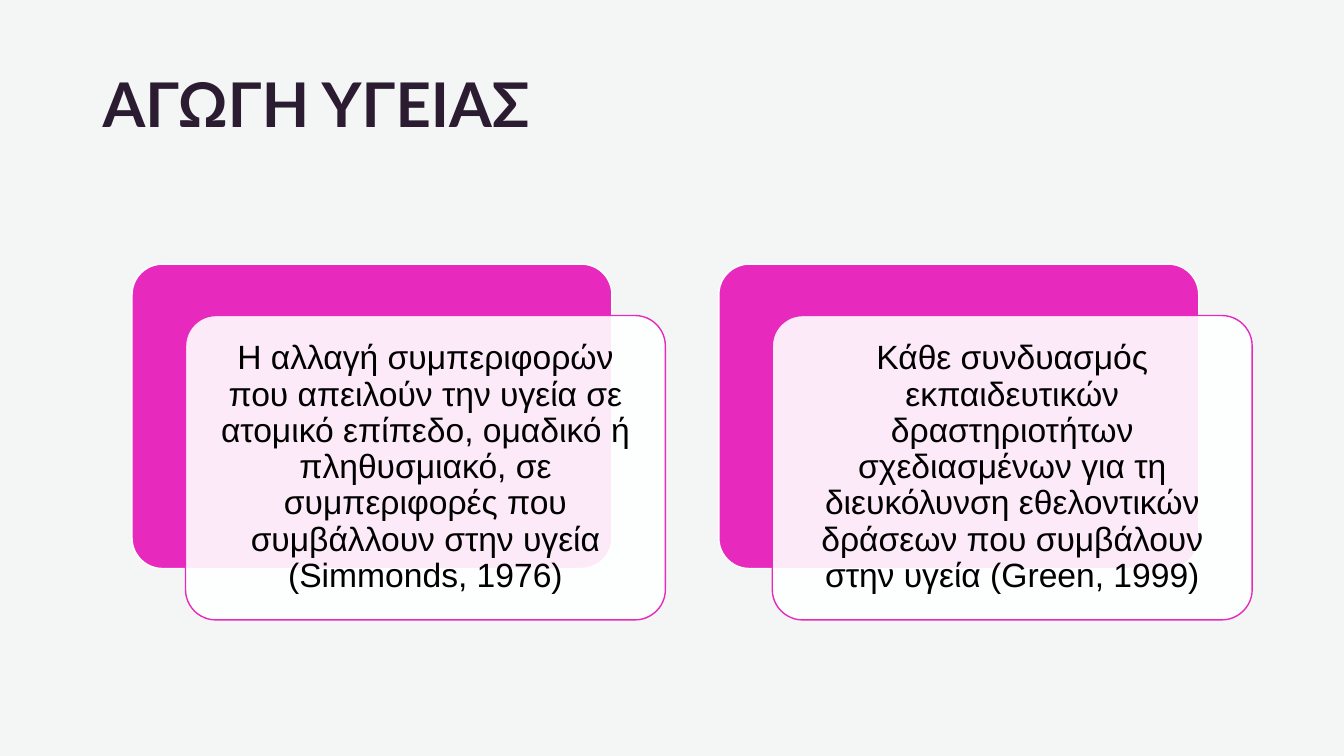
from lxml import etree
from pptx import Presentation
from pptx.dml.color import RGBColor
from pptx.enum.shapes import MSO_SHAPE as Preset
from pptx.enum.text import MSO_ANCHOR as Anchor, PP_ALIGN as Align
from pptx.oxml.ns import qn
from pptx.util import Inches, Pt

COLORS = {
    "white": "FFFFFF",
    "mist": "F0F3F1",
    "plum": "2C1C31",
    "magenta": "E729BE",
    "black": "000000",
}

SLIDE_SIZE = (13.33, 7.5)
CARD_SIZE = (4.76, 3.02)
CARD_LEFT, CARD_TOP, CARD_STEP = 1.31, 2.62, 5.82
FRONT_SHIFT = (0.53, 0.51)
TEXT_MARGIN = 0.09

DEFINITIONS = [
    "Η αλλαγή συμπεριφορών που απειλούν την υγεία σε ατομικό επίπεδο, "
    "ομαδικό ή πληθυσμιακό, σε συμπεριφορές που συμβάλλουν στην υγεία "
    "(Simmonds, 1976)",
    "Κάθε συνδυασμός εκπαιδευτικών δραστηριοτήτων σχεδιασμένων για τη "
    "διευκόλυνση εθελοντικών δράσεων που συμβάλουν στην υγεία (Green, 1999)",
]


def color(name):
    return RGBColor.from_string(COLORS[name])


def add_panel(shapes, preset, left, top, size, fill, opacity=100, line=None):
    shape = shapes.add_shape(preset, Inches(left), Inches(top), *map(Inches, size))
    shape.shadow.inherit = False
    shape.fill.solid()
    shape.fill.fore_color.rgb = color(fill)
    if opacity < 100:
        fill_color = shape.fill._xPr.find(qn("a:solidFill"))[0]
        etree.SubElement(fill_color, qn("a:alpha"), val=str(opacity * 1000))
    if line:
        shape.line.color.rgb = color(line)
        shape.line.width = Pt(1)
    else:
        shape.line.fill.background()
    if preset == Preset.ROUNDED_RECTANGLE:
        shape.adjustments[0] = 0.1


def add_text(shapes, left, top, size, text, font, points, font_color, bold=False):
    box = shapes.add_textbox(Inches(left), Inches(top), *map(Inches, size))
    text_frame = box.text_frame
    text_frame.word_wrap = True
    text_frame.text = text
    run_font = text_frame.paragraphs[0].runs[0].font
    run_font.name = font
    run_font.size = Pt(points)
    run_font.bold = bold
    run_font.color.rgb = color(font_color)
    return text_frame


def add_definition_card(slide, left, text):
    shapes = slide.shapes.add_group_shape().shapes
    front_left, front_top = left + FRONT_SHIFT[0], CARD_TOP + FRONT_SHIFT[1]
    add_panel(shapes, Preset.ROUNDED_RECTANGLE, left, CARD_TOP, CARD_SIZE,
              "magenta", line="white")
    add_panel(shapes, Preset.ROUNDED_RECTANGLE, front_left, front_top, CARD_SIZE,
              "white", opacity=90, line="magenta")

    text_size = [length - 2 * TEXT_MARGIN for length in CARD_SIZE]
    text_frame = add_text(shapes, front_left + TEXT_MARGIN, front_top + TEXT_MARGIN,
                          text_size, text, "Arial", 24, "black")
    text_frame.vertical_anchor = Anchor.MIDDLE
    text_frame.margin_left = text_frame.margin_right = Inches(0.1)
    text_frame.margin_top = text_frame.margin_bottom = Inches(0.1)
    paragraph = text_frame.paragraphs[0]
    paragraph.alignment = Align.CENTER
    paragraph.line_spacing = 0.9


def main():
    presentation = Presentation()
    presentation.slide_width, presentation.slide_height = map(Inches, SLIDE_SIZE)
    slide = presentation.slides.add_slide(presentation.slide_layouts[6])

    # Backdrop: white under a translucent tint
    add_panel(slide.shapes, Preset.RECTANGLE, 0, 0, SLIDE_SIZE, "white")
    add_panel(slide.shapes, Preset.RECTANGLE, 0, 0, SLIDE_SIZE, "mist", opacity=70)

    # Title
    add_text(slide.shapes, 0.92, 0.61, (11.32, 1.4), "ΑΓΩΓΗ ΥΓΕΙΑΣ",
             "Lato", 44, "plum", bold=True)

    # Definition cards
    for index, text in enumerate(DEFINITIONS):
        add_definition_card(slide, CARD_LEFT + index * CARD_STEP, text)

    presentation.save("out.pptx")


if __name__ == "__main__":
    main()
